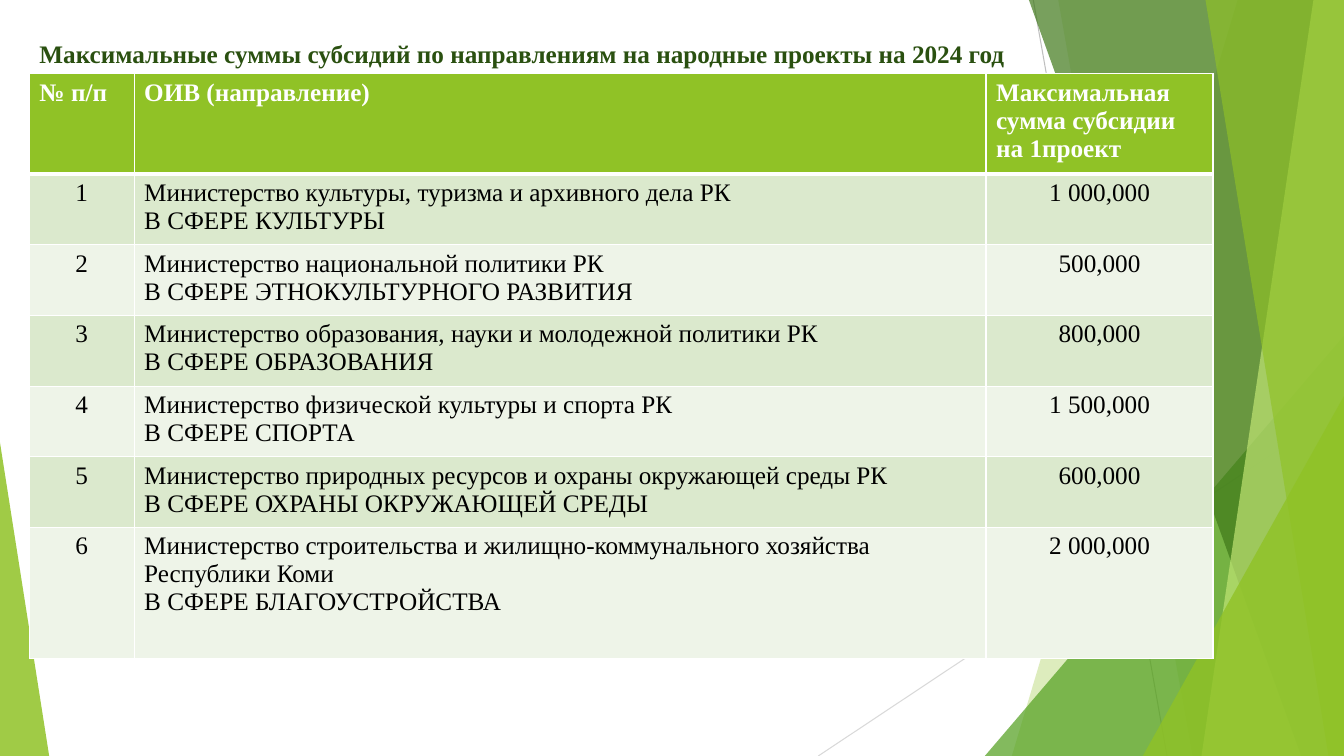
from lxml import etree
from pptx import Presentation
from pptx.dml.color import RGBColor
from pptx.enum.shapes import MSO_CONNECTOR, MSO_SHAPE
from pptx.enum.text import MSO_ANCHOR, MSO_AUTO_SIZE, PP_ALIGN
from pptx.oxml.ns import qn
from pptx.util import Cm, Pt

LEFT, CENTER = PP_ALIGN.LEFT, PP_ALIGN.CENTER
TRIANGLE = MSO_SHAPE.ISOSCELES_TRIANGLE
STRAIGHT = MSO_CONNECTOR.STRAIGHT
WIDTH, HEIGHT = 33.87, 19.05

TITLE = "Максимальные суммы субсидий по направлениям на народные проекты на 2024 год"
HEADER = ("№ п/п", "ОИВ (направление)", "Максимальная\nсумма субсидии на 1проект")
GRANTS = [
    ("Министерство культуры, туризма и архивного дела РК", "В СФЕРЕ КУЛЬТУРЫ", "1 000,000"),
    ("Министерство национальной политики РК", "В СФЕРЕ ЭТНОКУЛЬТУРНОГО РАЗВИТИЯ", "500,000"),
    ("Министерство образования, науки и молодежной политики РК", "В СФЕРЕ ОБРАЗОВАНИЯ", "800,000"),
    ("Министерство физической культуры и спорта РК", "В СФЕРЕ СПОРТА", "1 500,000"),
    ("Министерство природных ресурсов и охраны окружающей среды РК",
     "В СФЕРЕ ОХРАНЫ ОКРУЖАЮЩЕЙ СРЕДЫ", "600,000"),
    ("Министерство строительства и жилищно-коммунального хозяйства Республики Коми",
     "В СФЕРЕ БЛАГОУСТРОЙСТВА", "2 000,000"),
]
COLUMN_WIDTHS = (2.64, 21.47, 5.72)
ROW_HEIGHTS = (2.53, 1.78, 1.78, 1.78, 1.78, 1.78, 3.3)
COLUMN_ALIGNMENTS = (CENTER, LEFT, CENTER)
HEADER_FILL, ROW_FILLS = "90C226", ("DBE9CD", "EEF4E8")

# x1, y1, x2, y2, colour
RAYS = [(26.04, 0, 29.41, HEIGHT, "BFBFBF"), (WIDTH, 10.24, 20.62, HEIGHT, "D9D9D9")]
# Bands: top x, bottom x. Triangles: left, top, width, apex position. Then colour, opacity in percent.
FACETS = [
    ("band", (31.19, 25.5), "90C226", 30),
    ("band", (26.67, 30.05), "90C226", 20),
    ("triangle", (24.82, 8.46, 9.05, 1), "54A021", 72),
    ("band", (25.93, 32.79), "3F7819", 70),
    ("band", (33.1, 30.28), "C0E474", 70),
    ("band", (30.38, 33.48), "90C226", 65),
    ("triangle", (28.8, 9.98, 5.07, 1), "90C226", 80),
    ("triangle", (0, 11.15, 1.24, 0), "90C226", 85),
]


def rgb(value):
    return RGBColor.from_string(value)


def style_text(frame, alignment, **font_format):
    for para in frame.paragraphs:
        para.alignment = alignment
        para.font.color.rgb = rgb(font_format["color"])
        for name, value in {"name": "Times New Roman", "size": Pt(18),
                            "bold": font_format["bold"]}.items():
            setattr(para.font, name, value)


def add_ray(shapes, x1, y1, x2, y2, color):
    ray = shapes.add_connector(STRAIGHT, Cm(x1), Cm(y1), Cm(x2), Cm(y2))
    ray.line.color.rgb = rgb(color)
    ray.line.width = Pt(0.75)
    etree.SubElement(ray._element.spPr, qn("a:effectLst"))


def add_band(shapes, top_x, bottom_x):
    """Add an area running from a slanted left edge to the slide's right edge."""
    builder = shapes.build_freeform(Cm(top_x), 0)
    corners = [(WIDTH, 0), (WIDTH, HEIGHT), (bottom_x, HEIGHT)]
    builder.add_line_segments([(Cm(x), Cm(y)) for x, y in corners], close=True)
    return builder.convert_to_shape()


def add_triangle(shapes, left, top, width, apex):
    triangle = shapes.add_shape(TRIANGLE, Cm(left), Cm(top), Cm(width), Cm(HEIGHT - top))
    triangle.adjustments[0] = apex
    return triangle


def add_facet(shapes, kind, geometry, color, opacity):
    facet = {"band": add_band, "triangle": add_triangle}[kind](shapes, *geometry)
    facet.shadow.inherit = False
    facet.line.fill.background()
    facet.fill.solid()
    facet.fill.fore_color.rgb = rgb(color)
    tint = facet._element.spPr.find(qn("a:solidFill"))[0]
    etree.SubElement(tint, qn("a:alpha"), val=str(opacity * 1000))


def set_borders(cell, top, bottom):
    """Draw white cell edges; top and bottom widths are in points."""
    properties = cell._tc.get_or_add_tcPr()
    for side, width in (("L", 1), ("R", 1), ("T", top), ("B", bottom)):
        line = etree.SubElement(properties, qn(f"a:ln{side}"), w=str(Pt(width)))
        fill = etree.SubElement(line, qn("a:solidFill"))
        etree.SubElement(fill, qn("a:srgbClr"), val="FFFFFF")


def add_title(slide):
    title = slide.shapes.title
    box = {"left": Cm(0.74), "top": Cm(0.84), "width": Cm(26.31), "height": Cm(1.02)}
    for name, value in box.items():
        setattr(title, name, value)
    frame = title.text_frame
    frame.text = TITLE
    for name, value in {"word_wrap": True, "auto_size": MSO_AUTO_SIZE.NONE,
                        "vertical_anchor": MSO_ANCHOR.TOP}.items():
        setattr(frame, name, value)
    style_text(frame, LEFT, color="2A5010", bold=True)


def add_grant_table(slide):
    rows = [HEADER] + [(str(number), f"{ministry}\n{area}", amount)
                       for number, (ministry, area, amount) in enumerate(GRANTS, 1)]
    table = slide.shapes.add_table(len(rows), len(HEADER), Cm(0.74), Cm(1.86),
                                   Cm(sum(COLUMN_WIDTHS)), Cm(sum(ROW_HEIGHTS))).table
    for column, width in zip(table.columns, COLUMN_WIDTHS):
        column.width = Cm(width)
    for row, height in zip(table.rows, ROW_HEIGHTS):
        row.height = Cm(height)
    for r, texts in enumerate(rows):
        is_header = r == 0
        for c, text in enumerate(texts):
            cell = table.cell(r, c)
            cell.text = text
            set_borders(cell, top=3 if r == 1 else 1, bottom=3 if is_header else 1)
            cell.fill.solid()
            cell.fill.fore_color.rgb = rgb(HEADER_FILL if is_header else ROW_FILLS[(r - 1) % 2])
            style_text(cell.text_frame, LEFT if is_header else COLUMN_ALIGNMENTS[c],
                       color="FFFFFF" if is_header else "000000", bold=is_header)


def main():
    deck = Presentation()
    deck.slide_width, deck.slide_height = Cm(WIDTH), Cm(HEIGHT)
    slide = deck.slides.add_slide(deck.slide_layouts.get_by_name("Title Only"))
    for ray in RAYS:
        add_ray(slide.shapes, *ray)
    for facet in FACETS:
        add_facet(slide.shapes, *facet)
    add_title(slide)
    add_grant_table(slide)
    deck.save("out.pptx")


if __name__ == "__main__":
    main()
